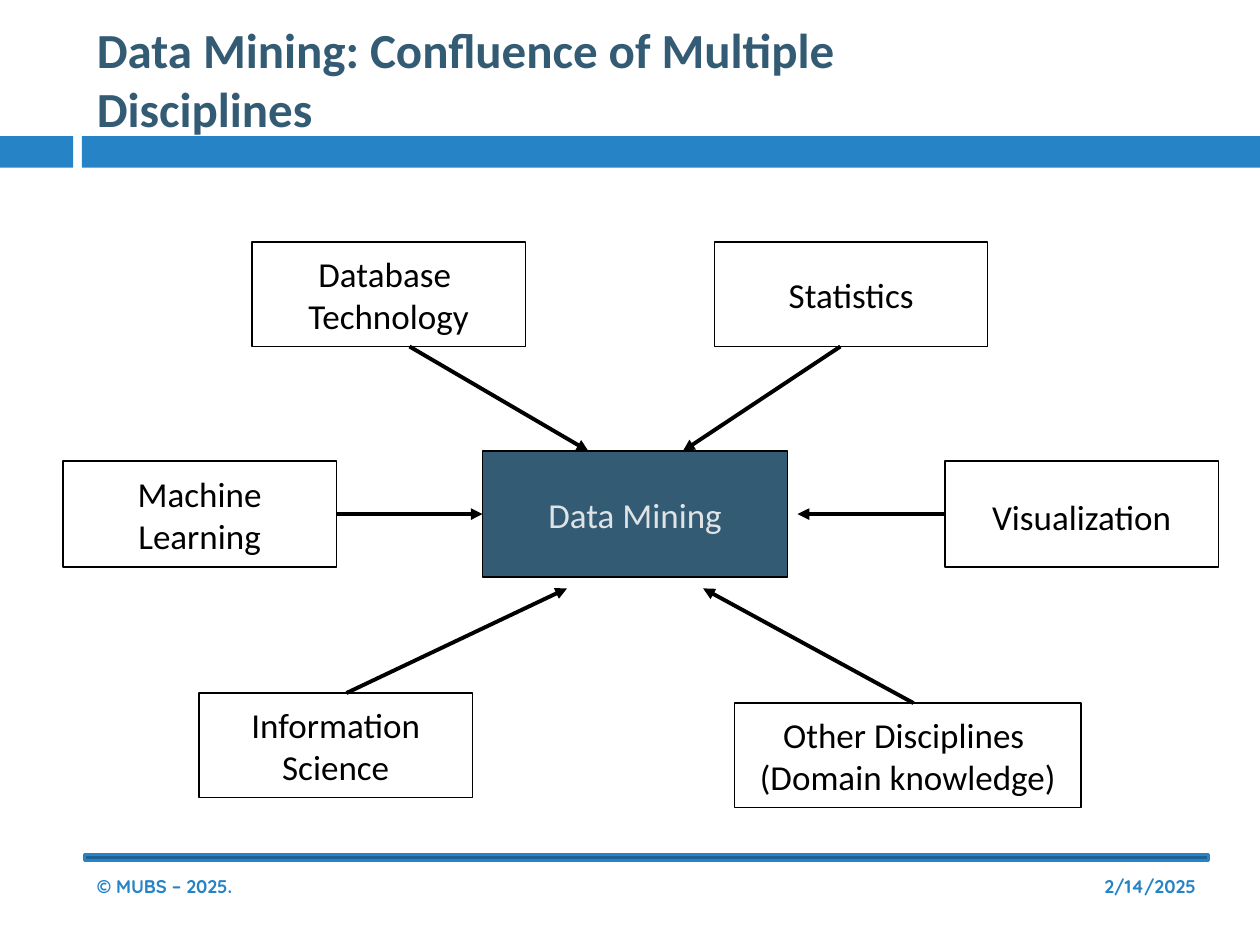
from lxml import etree
from pptx import Presentation
from pptx.dml.color import RGBColor
from pptx.enum.shapes import MSO_CONNECTOR as Connector, MSO_SHAPE as Shape
from pptx.enum.text import MSO_ANCHOR as Anchor, PP_ALIGN as Align
from pptx.oxml.ns import qn
from pptx.util import Inches, Pt

BLUE = RGBColor(0x26, 0x83, 0xC6)
DARK_BLUE = RGBColor(0x1D, 0x62, 0x94)
SLATE = RGBColor(0x33, 0x5B, 0x74)
PALE = RGBColor(0xDF, 0xE3, 0xE5)
BLACK = RGBColor(0, 0, 0)
WHITE = RGBColor(0xFF, 0xFF, 0xFF)

presentation = Presentation()
presentation.slide_width = Inches(10)
presentation.slide_height = Inches(7.5)
slide = presentation.slides.add_slide(presentation.slide_layouts[6])


def write(shape, text, size=20, font="Calibri", color=BLACK, bold=False,
          align=Align.CENTER, wrap=False, line_spacing=None):
    frame = shape.text_frame
    frame.text = text
    frame.word_wrap = wrap
    frame.vertical_anchor = Anchor.MIDDLE
    for paragraph in frame.paragraphs:
        paragraph.alignment = align
        if line_spacing:
            paragraph.line_spacing = line_spacing
        paragraph.font.size = Pt(size)
        paragraph.font.name = font
        paragraph.font.bold = bold
        paragraph.font.color.rgb = color


def add_box(left, top, width, height, fill, line=None, line_width=0.75):
    box = slide.shapes.add_shape(Shape.RECTANGLE, Inches(left), Inches(top),
                                 Inches(width), Inches(height))
    box.shadow.inherit = False
    box.fill.solid()
    box.fill.fore_color.rgb = fill
    if line is None:
        box.line.fill.background()
    else:
        box.line.color.rgb = line
        box.line.width = Pt(line_width)
    return box


# Header band and footer rule
add_box(0, 1.08, 0.58, 0.25, BLUE)
add_box(0.65, 1.08, 9.35, 0.25, BLUE)
add_box(0.67, 6.78, 8.92, 0.05, DARK_BLUE, BLUE, 1.5)

# Title and footer texts
footer = dict(size=10.5, font="Quicksand", color=BLUE)
for text, left, top, width, height, text_format in [
    ("© MUBS – 2025.", 0.67, 6.83, 6, 0.4, dict(footer, align=Align.LEFT)),
    ("2/14/2025", 7.42, 6.83, 2.17, 0.4, dict(footer, align=Align.RIGHT)),
    ("Data Mining: Confluence of Multiple Disciplines", 0.67, 0.17, 7.37, 0.9,
     dict(size=28, color=SLATE, align=Align.LEFT)),
]:
    text_box = slide.shapes.add_textbox(Inches(left), Inches(top),
                                        Inches(width), Inches(height))
    write(text_box, text, bold=True, wrap=True, **text_format)

# Central topic
data_mining = add_box(3.83, 3.58, 2.42, 1, SLATE, BLACK)
write(data_mining, "Data Mining", color=PALE)

# Contributing disciplines
disciplines = {}
for text, left, top, width, height, line_spacing in [
    ("Database \nTechnology", 2, 1.92, 2.17, 0.83, None),
    ("Statistics", 5.67, 1.92, 2.17, 0.83, None),
    ("Other Disciplines \n(Domain knowledge)", 5.83, 5.58, 2.75, 0.83, None),
    ("Information\nScience", 1.58, 5.5, 2.17, 0.83, None),
    ("Machine\nLearning", 0.5, 3.66, 2.17, 0.84, None),
    ("Visualization", 7.5, 3.66, 2.17, 0.84, 1.1),
]:
    box = add_box(left, top, width, height, WHITE, BLACK)
    write(box, text, line_spacing=line_spacing)
    disciplines[text] = box

# Arrows towards the central topic
arrows = []
for start_x, start_y, end_x, end_y in [
    (2.67, 4.08, 3.83, 4.08),
    (7.5, 4.08, 6.33, 4.08),
    (3.25, 2.75, 4.67, 3.58),
    (6.67, 2.75, 5.42, 3.58),
    (7.25, 5.58, 5.58, 4.67),
    (2.75, 5.5, 4.5, 4.67),
]:
    arrow = slide.shapes.add_connector(Connector.STRAIGHT, Inches(start_x), Inches(start_y),
                                       Inches(end_x), Inches(end_y))
    arrow.line.color.rgb = BLACK
    arrow.line.width = Pt(2.25)
    etree.SubElement(arrow.line._get_or_add_ln(), qn("a:tailEnd"), type="triangle")
    etree.SubElement(arrow._element.spPr, qn("a:effectLst"))
    arrows.append(arrow)

# The level arrows meet the middles of box sides
arrows[0].begin_connect(disciplines["Machine\nLearning"], 3)
arrows[0].end_connect(data_mining, 1)
arrows[1].begin_connect(disciplines["Visualization"], 1)

presentation.save("out.pptx")
